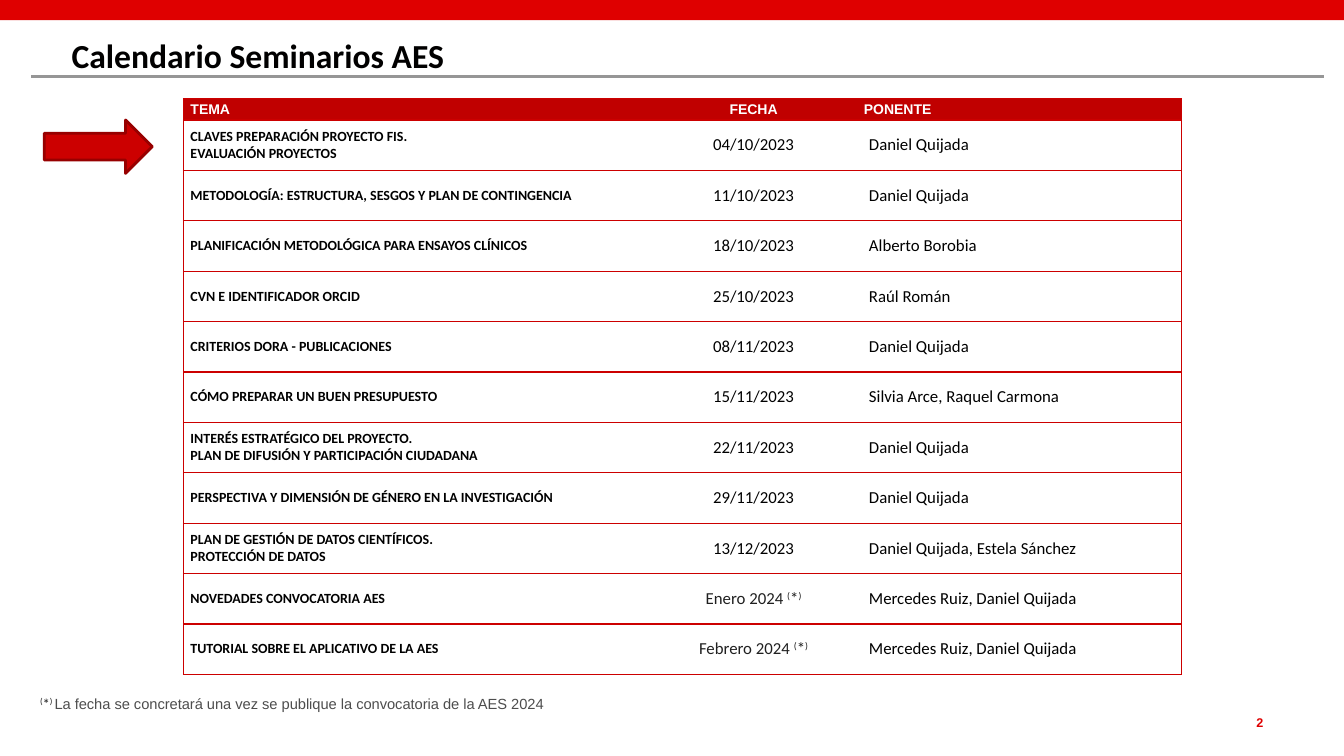
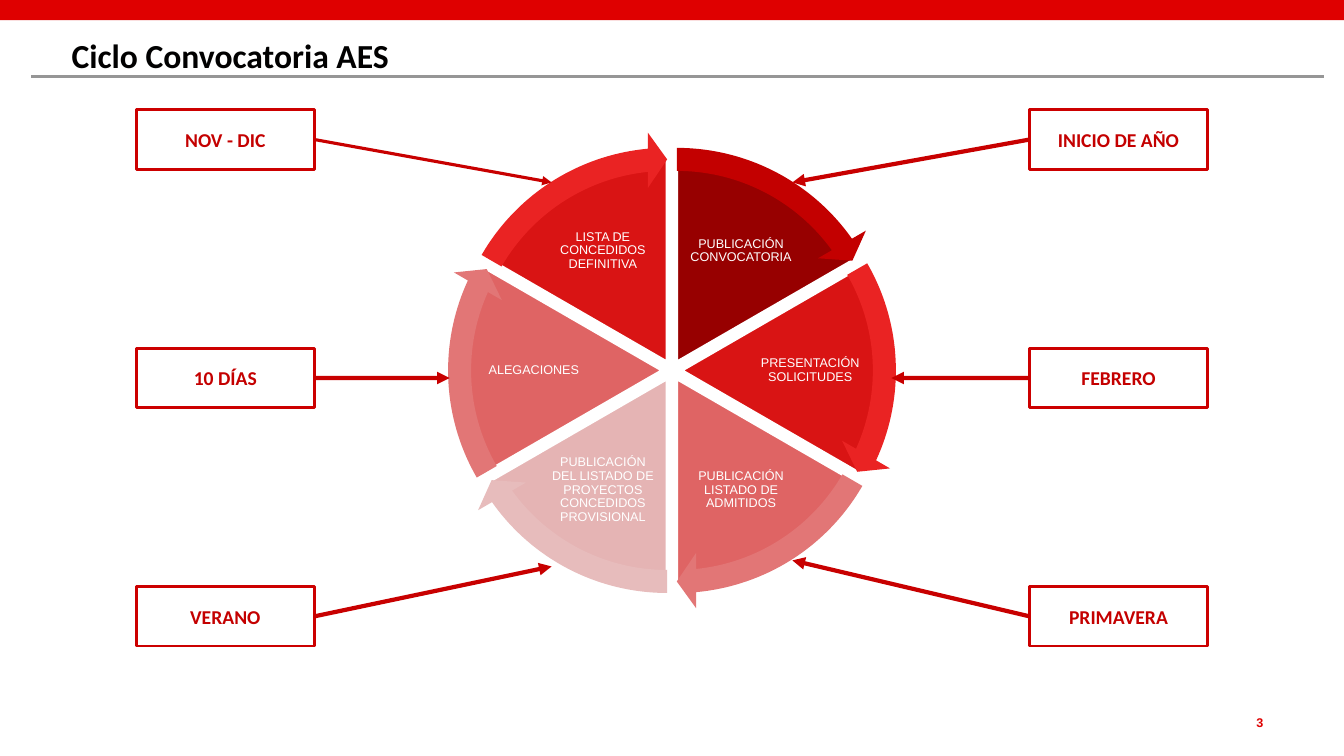
from math import cos, radians, sin

from lxml.etree import SubElement
from pptx import Presentation
from pptx.dml.color import RGBColor
from pptx.enum.shapes import MSO_CONNECTOR, MSO_SHAPE as Preset
from pptx.enum.text import MSO_ANCHOR as Anchor, MSO_AUTO_SIZE as AutoSize, PP_ALIGN as Align
from pptx.oxml.ns import qn
from pptx.util import Inches, Pt

SLIDE_WIDTH, SLIDE_HEIGHT = Inches(13.33), Inches(7.5)
BRIGHT_RED, RED, DEEP_RED, DARK_RED = "DF0000", "CC0000", "C00000", "970000"
WHITE, BLACK, GREY, INK = "FFFFFF", "000000", "969696", "202020"

TITLE = dict(name="Calibri", size=Pt(24), bold=True, color="010000")
PAGE_NUMBER = dict(name="Arial", size=Pt(9), bold=True, color=BRIGHT_RED)
HEADING = dict(name="Arial", size=Pt(10), bold=True, color=WHITE)
TOPIC = dict(name="Calibri", size=Pt(10), bold=True, color=BLACK)
DETAIL = dict(name="Calibri", size=Pt(12), bold=False, color=BLACK)
PENDING = dict(DETAIL, color=INK)
NOTE_MARK = dict(name="Calibri", size=Pt(10.5), color=INK)
NOTE = dict(name="Arial", size=Pt(10.5), color="4D4D4D")
STAGE = dict(name="Arial", size=Pt(9), color=WHITE)
PERIOD = dict(name="Calibri", size=Pt(14), bold=True, color="C40000")

ONE_DAY = "Daniel Quijada"
BOTH = "Mercedes Ruiz, Daniel Quijada"
SEMINARS = [
    ("CLAVES PREPARACIÓN PROYECTO FIS.\nEVALUACIÓN PROYECTOS", "04/10/2023", ONE_DAY),
    ("METODOLOGÍA: ESTRUCTURA, SESGOS Y PLAN DE CONTINGENCIA", "11/10/2023", ONE_DAY),
    ("PLANIFICACIÓN METODOLÓGICA PARA ENSAYOS CLÍNICOS", "18/10/2023", "Alberto Borobia"),
    ("CVN E IDENTIFICADOR ORCID", "25/10/2023", "Raúl Román"),
    ("CRITERIOS DORA - PUBLICACIONES", "08/11/2023", ONE_DAY),
    ("CÓMO PREPARAR UN BUEN PRESUPUESTO", "15/11/2023", "Silvia Arce, Raquel Carmona"),
    ("INTERÉS ESTRATÉGICO DEL PROYECTO.\nPLAN DE DIFUSIÓN Y PARTICIPACIÓN CIUDADANA",
     "22/11/2023", ONE_DAY),
    ("PERSPECTIVA Y DIMENSIÓN DE GÉNERO EN LA INVESTIGACIÓN", "29/11/2023", ONE_DAY),
    ("PLAN DE GESTIÓN DE DATOS CIENTÍFICOS.\nPROTECCIÓN DE DATOS", "13/12/2023",
     "Daniel Quijada, Estela Sánchez"),
    ("NOVEDADES CONVOCATORIA AES", "Enero 2024 ", BOTH),
    ("TUTORIAL SOBRE EL APLICATIVO DE LA AES", "Febrero 2024 ", BOTH),
]

# Clockwise from the top: stage, wedge, rim, period, right side?, row, pointer tip (x, y), pointer width
STAGES = [
    ("PUBLICACIÓN CONVOCATORIA", DARK_RED, "C30000", "INICIO DE AÑO", True, 0, (58.96, 24.13), 3),
    ("PRESENTACIÓN SOLICITUDES", "D91414", "EA2323", "FEBRERO", True, 1, (66.32, 50), 3),
    ("PUBLICACIÓN LISTADO DE ADMITIDOS", "DF6464", "E27676", "PRIMAVERA", True, 2, (58.96, 74.13), 3),
    ("PUBLICACIÓN DEL LISTADO DE PROYECTOS CONCEDIDOS PROVISIONAL", "E5B4B4", "E7BCBC",
     "VERANO", False, 2, (41.04, 74.93), 3),
    ("ALEGACIONES", "DF6464", "E27676", "10 DÍAS", False, 1, (33.46, 50), 3),
    ("LISTA DE CONCEDIDOS DEFINITIVA", "D91414", "EA2323", "NOV - DIC", False, 0, (41.04, 24.13), 2.25),
]


def rgb(value):
    return RGBColor.from_string(value)


def across(percent):
    return int(SLIDE_WIDTH * percent / 100)


def down(percent):
    return int(SLIDE_HEIGHT * percent / 100)


def area(left, top, width, height):
    """Turn percentages of the slide into a position and size."""
    return across(left), down(top), across(width), down(height)


def centred(x, y, width, height):
    return int(x - width / 2), int(y - height / 2), width, height


def add_run(paragraph, text, style, raised=False):
    run = paragraph.add_run()
    run.text = text
    for key, value in style.items():
        if key == "color":
            run.font.color.rgb = rgb(value)
        else:
            setattr(run.font, key, value)
    if raised:
        run.font._element.set("baseline", "30000")


def add_mark(paragraph, style, closing=")"):
    """Write the asterisk between raised brackets that flags the footnote."""
    for text, raised in (("(", True), ("*", False), (closing, True)):
        add_run(paragraph, text, style, raised)


def write(frame, text, style, align=Align.LEFT):
    for index, line in enumerate(text.split("\n")):
        paragraph = frame.add_paragraph() if index else frame.paragraphs[0]
        paragraph.alignment = align
        add_run(paragraph, line, style)


def set_margins(frame, margin):
    for side in ("left", "top", "right", "bottom"):
        setattr(frame, f"margin_{side}", Inches(margin))


def add_figure(slide, preset, place, fill, line=None, angles=()):
    figure = slide.shapes.add_shape(preset, *place)
    figure.shadow.inherit = False
    figure.fill.solid()
    figure.fill.fore_color.rgb = rgb(fill)
    if line:
        figure.line.color.rgb = rgb(line)
        figure.line.width = Pt(2)
    else:
        figure.line.fill.background()
    for index, value in enumerate(angles):
        figure.adjustments[index] = value
    return figure


def add_line(slide, start, end, color, width, arrow=False):
    line = slide.shapes.add_connector(MSO_CONNECTOR.STRAIGHT, *start, *end)
    line.line.color.rgb = rgb(color)
    line.line.width = Pt(width)
    if arrow:
        SubElement(line.line._get_or_add_ln(), qn("a:tailEnd"), type="triangle")
    SubElement(line._element.spPr, qn("a:effectLst"))
    return line


def add_label(slide, place, margin=None):
    frame = slide.shapes.add_textbox(*place).text_frame
    frame.word_wrap = True
    if margin is not None:
        set_margins(frame, margin)
    return frame


def add_slide(deck, title, number):
    slide = deck.slides.add_slide(deck.slide_layouts[5])
    heading = slide.shapes.title
    places = area(4.95, 4, 91.67, 6.27)
    for key, value in zip(("left", "top", "width", "height"), places):
        setattr(heading, key, value)
    frame = heading.text_frame
    frame.auto_size, frame.vertical_anchor = AutoSize.NONE, Anchor.TOP
    set_margins(frame, 0.05)
    write(frame, title, TITLE)
    page = add_label(slide, area(84.55, 94.53, 9.45, 2), 0)
    write(page, str(number), PAGE_NUMBER, Align.RIGHT)
    return slide


def decorate_layout(slide):
    """Draw the band and the title rule, and hand them to the slide's layout."""
    band = add_figure(slide, Preset.RECTANGLE, area(0, 0, 100, 2.67), BRIGHT_RED)
    rule = add_line(slide, (across(2.33), down(10.13)), (across(98.5), down(10.13)), GREY, 2.25)
    for part in (band, rule):
        slide.slide_layout.shapes.element.append(part._element)


def set_borders(cell, red_sides):
    properties = cell._tc.get_or_add_tcPr()
    for index, side in enumerate("LRTB"):
        border = properties.makeelement(qn(f"a:ln{side}"), {"w": str(Pt(1))})
        if side in red_sides:
            SubElement(SubElement(border, qn("a:solidFill")), qn("a:srgbClr"), val=RED)
        else:
            SubElement(border, qn("a:noFill"))
        properties.insert(index, border)


def format_cell(cell, column, fill):
    cell.fill.solid()
    cell.fill.fore_color.rgb = rgb(fill)
    cell.vertical_anchor = Anchor.MIDDLE
    cell.margin_left = cell.margin_right = Inches(0.07)
    cell.margin_top = cell.margin_bottom = 0
    set_borders(cell, ("LTB", "TB", "RTB")[column])


def add_calendar(slide):
    widths, header_height, row_height = (34.73, 15.38, 24.16), 2.8, 6.67
    height = header_height + row_height * len(SEMINARS)
    calendar = slide.shapes.add_table(
        len(SEMINARS) + 1, 3, *area(13.65, 13.07, sum(widths), height)).table
    calendar.horz_banding = False
    for column, width in zip(calendar.columns, widths):
        column.width = across(width)
    for index, row in enumerate(calendar.rows):
        row.height = down(row_height if index else header_height)
    aligns = (Align.LEFT, Align.CENTER, Align.LEFT)
    for index, texts in enumerate([("TEMA", "FECHA", "PONENTE"), *SEMINARS]):
        for column, text in enumerate(texts):
            cell = calendar.cell(index, column)
            format_cell(cell, column, WHITE if index else DEEP_RED)
            pending = column == 1 and text.endswith(" ")
            body = TOPIC if column == 0 else PENDING if pending else DETAIL
            write(cell.text_frame, text, body if index else HEADING, aligns[column])
            if pending:
                add_mark(cell.text_frame.paragraphs[0], PENDING)
            if index and column == 2:
                cell.margin_left = Inches(0.12)


def add_footnote(slide):
    paragraph = add_label(slide, area(2.25, 91.2, 40.06, 3.73)).paragraphs[0]
    add_mark(paragraph, NOTE_MARK, ") ")
    add_run(paragraph, "La fecha se concretará una vez se publique la convocatoria de la AES 2024", NOTE)


def add_wheel(slide):
    """Draw wedges, labels and rim arrows, each pushed out along its middle angle."""
    step = 360 / len(STAGES)

    def outward(index, distance):
        middle = radians(index * step - 60)
        return across(50) + down(distance) * cos(middle), down(49) + down(distance) * sin(middle)

    def turn(degrees):
        return degrees % 360 * 0.6

    wedge, rim = down(54.13), down(60.93)
    for index, (label, color, *_) in enumerate(STAGES):
        start = 270 + index * step
        add_figure(slide, Preset.PIE, centred(*outward(index, 1.28), wedge, wedge), color, WHITE,
                   (turn(start), turn(start + step)))
        frame = add_label(slide, centred(*outward(index, 18.27), across(7.95), down(10.93)), 0.01)
        frame.vertical_anchor = Anchor.MIDDLE
        write(frame, label, STAGE, Align.CENTER)
        frame.paragraphs[0].line_spacing = 0.9
    head = 5.46
    for index, (_, _, color, *_) in enumerate(STAGES):
        start = 270 + index * step
        add_figure(slide, Preset.CIRCULAR_ARROW, centred(*outward(index, 1.28), rim, rim), color,
                   angles=(0.05, turn(head), turn(start + step - head), turn(start), 0.06))


def add_periods(slide):
    width, height, margin = 13.28, 7.87, 10.13
    for _, _, _, period, on_right, row, (tip_x, tip_y), thickness in STAGES:
        left = 100 - margin - width if on_right else margin
        place = area(left, 14.53 + 31.53 * row, width, height)
        box = add_figure(slide, Preset.FLOWCHART_PROCESS, place, WHITE, RED)
        box.text_frame.vertical_anchor = Anchor.MIDDLE
        write(box.text_frame, period, PERIOD, Align.CENTER)
        tip = across(tip_x), down(tip_y)
        pointer = add_line(slide, tip, tip, "C80000", thickness, arrow=True)
        pointer.begin_connect(box, 1 if on_right else 3)


def main():
    deck = Presentation()
    deck.slide_width, deck.slide_height = SLIDE_WIDTH, SLIDE_HEIGHT

    calendar = add_slide(deck, "Calendario Seminarios AES", 2)
    decorate_layout(calendar)
    add_calendar(calendar)
    add_figure(calendar, Preset.RIGHT_ARROW, area(3.3, 15.87, 8.03, 7.07), RED, DARK_RED)
    add_footnote(calendar)

    cycle = add_slide(deck, "Ciclo Convocatoria AES", 3)
    add_wheel(cycle)
    add_periods(cycle)

    deck.save("out.pptx")


if __name__ == "__main__":
    main()
